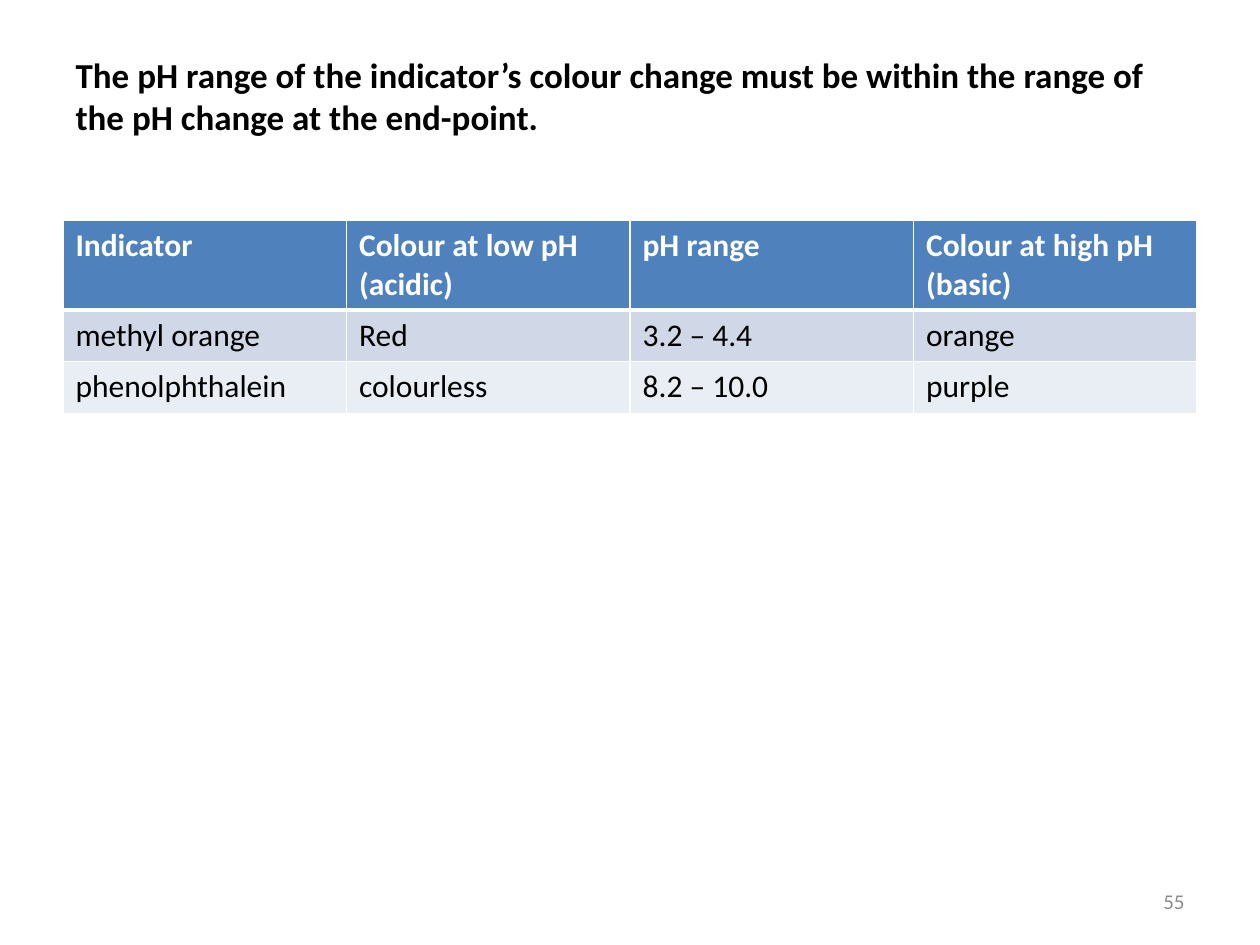
from lxml.etree import SubElement
from pptx import Presentation
from pptx.dml.color import RGBColor as RGB
from pptx.enum.text import MSO_ANCHOR as Anchor, PP_ALIGN as Align
from pptx.oxml.ns import qn
from pptx.util import Inches, Pt

BLACK = RGB(0x00, 0x00, 0x00)
WHITE = RGB(0xFF, 0xFF, 0xFF)
GREY = RGB(0x8C, 0x8C, 0x8C)
BLUE = RGB(0x4F, 0x81, 0xBD)
BANDS = [RGB(0xE9, 0xED, 0xF4), RGB(0xD0, 0xD8, 0xE8)]

ROWS = [
    ["Indicator", "Colour at low pH (acidic)", "pH range", "Colour at high pH\n(basic)"],
    ["methyl orange", "Red", "3.2 – 4.4", "orange"],
    ["phenolphthalein", "colourless", "8.2 – 10.0", "purple"],
]


class Deck:
    font = "Calibri"
    width, height = Inches(10), Inches(7.5)

    def __init__(self):
        self.prs = Presentation()
        self.prs.slide_width, self.prs.slide_height = self.width, self.height
        self.s = self.prs.slides.add_slide(self.prs.slide_layouts[5])

    def box(self, x, y, w, h):
        return [int(v) for v in (x * self.width, y * self.height, w * self.width, h * self.height)]

    def fill_text(self, tf, text, size, color, bold=False, align=Align.LEFT):
        tf.text = text
        for p in tf.paragraphs:
            p.alignment = align
            for r in p.runs:
                for name, value in dict(name=self.font, size=Pt(size), bold=bold).items():
                    setattr(r.font, name, value)
                r.font.color.rgb = color

    def frame(self, tf, **kw):
        for name, value in dict(word_wrap=True, vertical_anchor=Anchor.MIDDLE, **kw).items():
            setattr(tf, name, value)

    def title(self, text, area):
        sp = self.s.shapes.title
        sp.left, sp.top, sp.width, sp.height = self.box(*area)
        self.frame(sp.text_frame, margin_bottom=Inches(0.38))
        self.fill_text(sp.text_frame, text, 20, BLACK, bold=True)

    def label(self, text, area, size, color, align):
        tf = self.s.shapes.add_textbox(*self.box(*area)).text_frame
        self.frame(tf)
        self.fill_text(tf, text, size, color, align=align)

    def borders(self, cell, **widths):
        tcPr = cell._tc.get_or_add_tcPr()
        for side in "LRTB":
            ln = SubElement(tcPr, qn(f"a:ln{side}"), w=str(Pt(widths.get(side, 1))))
            SubElement(SubElement(ln, qn("a:solidFill")), qn("a:srgbClr"), val=str(WHITE))

    def table(self, rows, area, heights):
        table = self.s.shapes.add_table(len(rows), len(rows[0]), *self.box(*area)).table
        for i, (row, height) in enumerate(zip(rows, heights)):
            table.rows[i].height = Inches(height)
            head = i == 0
            thick = {0: {"B": 3}, 1: {"T": 3}}.get(i, {})
            for j, text in enumerate(row):
                cell = table.cell(i, j)
                self.borders(cell, **thick)
                cell.fill.solid()
                cell.fill.fore_color.rgb = BLUE if head else BANDS[i % 2]
                self.fill_text(cell.text_frame, text, 18, WHITE if head else BLACK, bold=head)


def main():
    deck = Deck()
    deck.title("The pH range of the indicator’s colour change must be within the range of "
               "the pH change at the end-point.", (0.05, 0.04, 0.9, 1 / 6))
    deck.table(ROWS, (0.05, 1.75 / 7.5, 0.9, 0.2), [0.7, 0.41, 0.41])
    deck.label("55", (0.72, 6.95 / 7.5, 0.23, 0.4 / 7.5), 12, GREY, Align.RIGHT)
    deck.prs.save("out.pptx")


if __name__ == "__main__":
    main()
